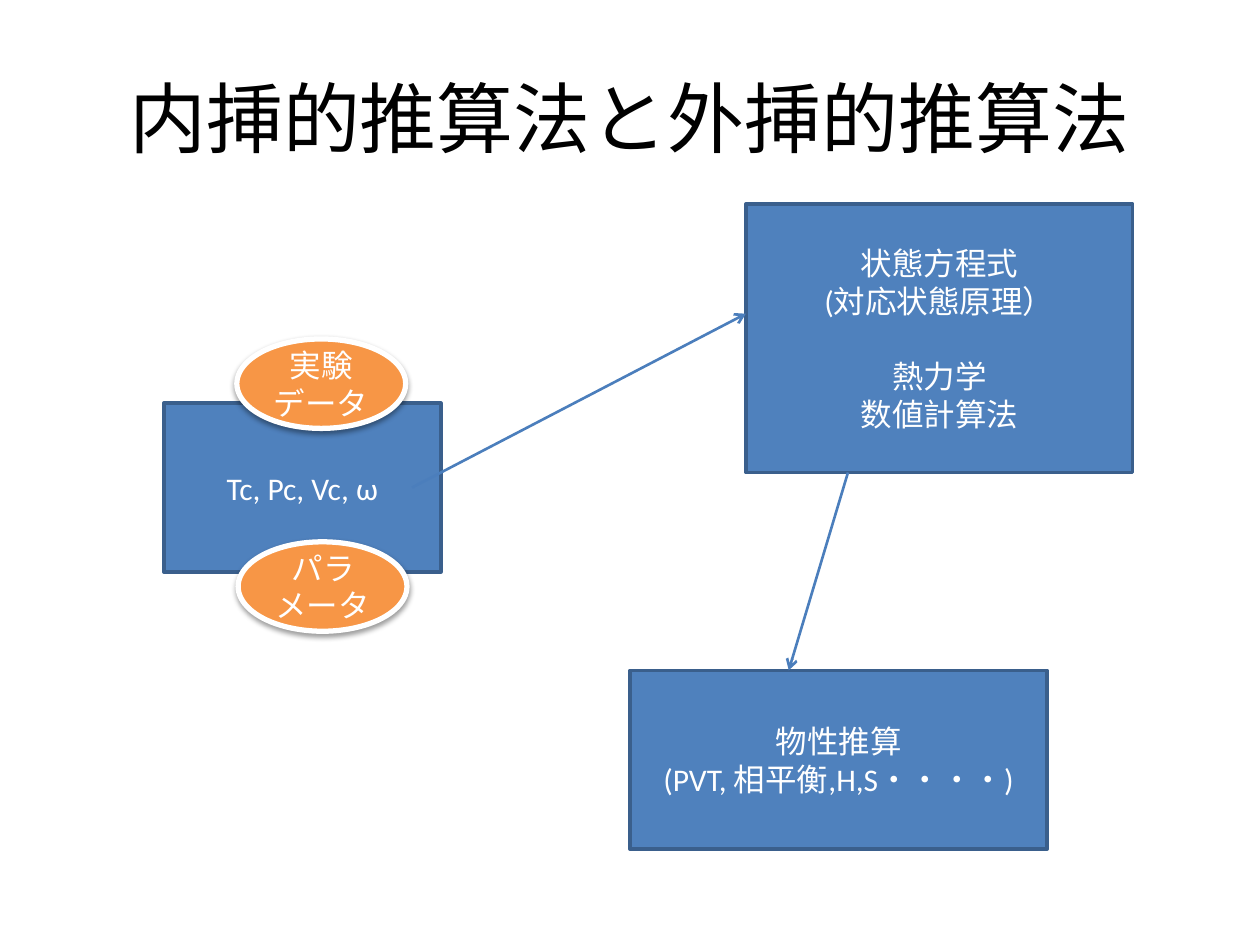
import pptx
import pptx.dml.color
import pptx.enum.shapes
import pptx.enum.text
import pptx.oxml
import pptx.oxml.ns
import pptx.util
from pptx.util import Inches

RGBColor = pptx.dml.color.RGBColor
Shape = pptx.enum.shapes.MSO_SHAPE
BLACK = RGBColor(0x00, 0x00, 0x00)
WHITE = RGBColor(0xFF, 0xFF, 0xFF)
BLUE = RGBColor(0x4F, 0x81, 0xBD)
DARK_BLUE = RGBColor(0x3A, 0x5F, 0x8C)
ARROW_BLUE = RGBColor(0x4B, 0x7E, 0xBC)
ORANGE = RGBColor(0xF7, 0x96, 0x46)
FONT = "Calibri"
LINE_HEIGHT = pptx.util.Pt(21.6)

SHADOW = (
    '<a:effectLst %s><a:outerShdw blurRad="39370" dist="20320" dir="5400000" '
    'rotWithShape="0"><a:srgbClr val="000000"><a:alpha val="38000"/></a:srgbClr>'
    '</a:outerShdw></a:effectLst>' % pptx.oxml.ns.nsdecls("a")
)
NO_EFFECTS = '<a:effectLst %s/>' % pptx.oxml.ns.nsdecls("a")
ARROWHEAD = '<a:tailEnd %s type="arrow"/>' % pptx.oxml.ns.nsdecls("a")


def format_paragraph(para, size, color):
    para.alignment = pptx.enum.text.PP_ALIGN.CENTER
    para.font.name = FONT
    para.font.size = pptx.util.Pt(size)
    para.font.color.rgb = color


def place(shape, box):
    shape.left, shape.top, shape.width, shape.height = map(Inches, box)


def add_title(page, box, text):
    title = page.shapes.title
    place(title, box)
    title.text_frame.text = text
    title.text_frame.vertical_anchor = pptx.enum.text.MSO_ANCHOR.MIDDLE
    format_paragraph(title.text_frame.paragraphs[0], 44, BLACK)


def add_node(page, kind, box, groups, fill, line, line_width):
    """Add a filled shape whose groups of lines stand one line apart."""
    node = page.shapes.add_shape(kind, *map(Inches, box))
    node.shadow.inherit = False
    node.fill.solid()
    node.fill.fore_color.rgb = fill
    node.line.color.rgb = line
    node.line.width = pptx.util.Pt(line_width)
    frame = node.text_frame
    frame.word_wrap = True
    frame.vertical_anchor = pptx.enum.text.MSO_ANCHOR.MIDDLE
    frame.text = "\n".join(text for group in groups for text in group)
    for para in frame.paragraphs:
        format_paragraph(para, 18, WHITE)
    first = 0
    for group in groups[:-1]:
        first += len(group)
        frame.paragraphs[first].space_before = LINE_HEIGHT
    return node


def add_step(page, box, *groups):
    return add_node(page, Shape.RECTANGLE, box, groups, BLUE, DARK_BLUE, 2)


def add_source(page, box, text):
    """Add an orange oval with a soft shadow below it."""
    oval = add_node(page, Shape.OVAL, box, [[text]], ORANGE, WHITE, 3)
    properties = oval.element.spPr
    properties.remove(properties.find(pptx.oxml.ns.qn("a:effectLst")))
    properties.append(pptx.oxml.parse_xml(SHADOW))


def add_arrow(page, start, end):
    arrow = page.shapes.add_connector(
        pptx.enum.shapes.MSO_CONNECTOR.STRAIGHT, *map(Inches, start + end))
    arrow.line.color.rgb = ARROW_BLUE
    arrow.line.width = pptx.util.Pt(1.5)
    arrow.line._get_or_add_ln().append(pptx.oxml.parse_xml(ARROWHEAD))
    arrow.element.spPr.append(pptx.oxml.parse_xml(NO_EFFECTS))


def add_flow(page):
    add_step(page, (1.3, 3.2, 2.2, 1.34), ["Tc, Pc, Vc, ω"])
    add_step(page, (5.92, 1.62, 3.07, 2.13),
             ["状態方程式", "(対応状態原理）"], ["熱力学", "数値計算法"])
    add_step(page, (5, 5.32, 3.31, 1.42),
             ["物性推算", "(PVT, 相平衡,H,S・・・・)"])
    add_arrow(page, (3.27, 3.87), (5.92, 2.49))
    add_arrow(page, (6.73, 3.75), (6.26, 5.32))
    add_source(page, (1.88, 2.69, 1.34, 0.71), "実験データ")
    add_source(page, (1.89, 4.3, 1.34, 0.71), "パラメータ")


def main():
    deck = pptx.Presentation()
    deck.slide_width, deck.slide_height = Inches(10), Inches(7.5)
    page = deck.slides.add_slide(deck.slide_layouts.get_by_name("Title Only"))
    add_title(page, (0.5, 0.3, 9, 1.25), "内挿的推算法と外挿的推算法")
    add_flow(page)
    deck.save("out.pptx")


if __name__ == "__main__":
    main()
